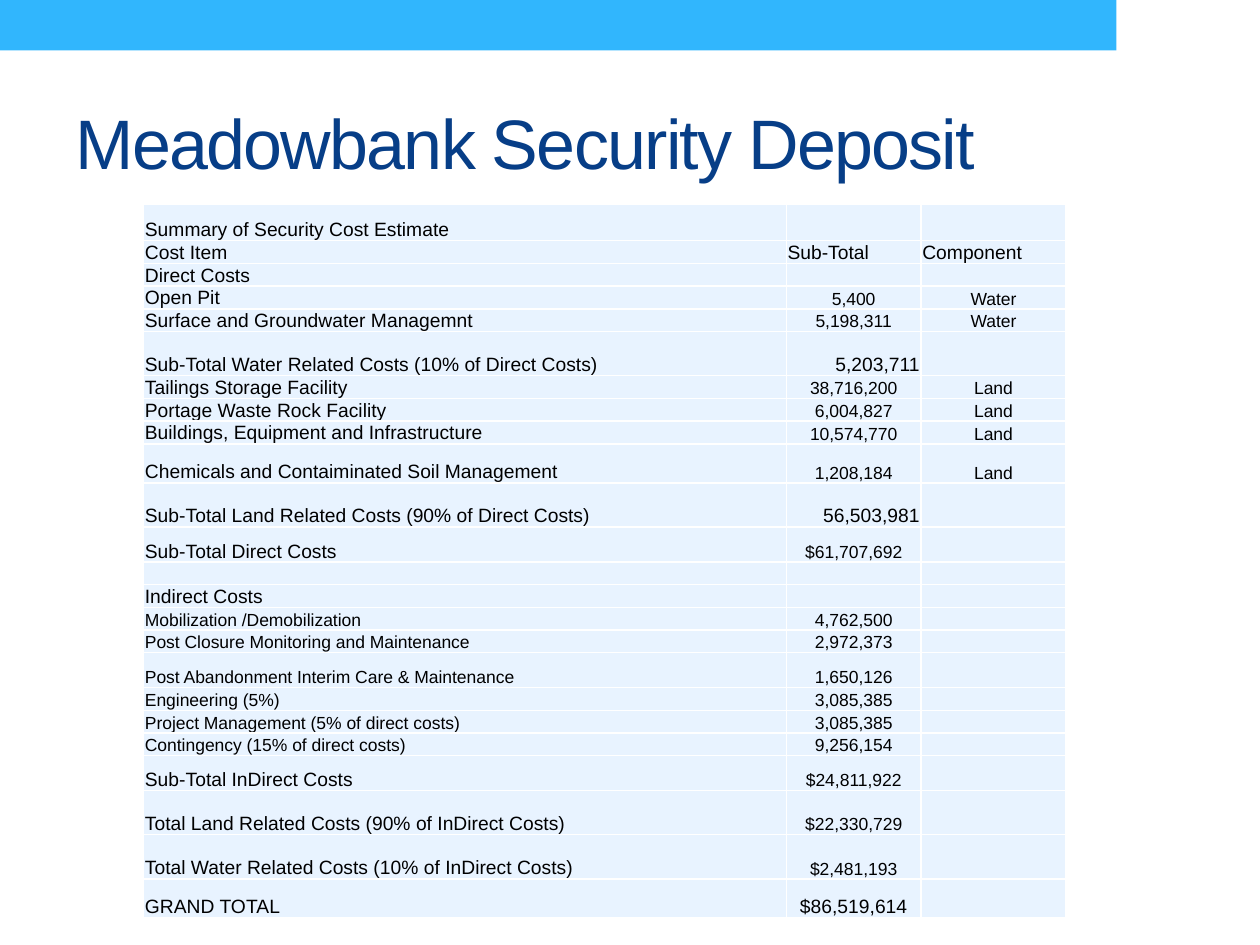
from dataclasses import dataclass
from typing import Any

from lxml.etree import SubElement
from pptx import Presentation
from pptx.dml.color import RGBColor
from pptx.enum.shapes import MSO_SHAPE
from pptx.enum.text import MSO_ANCHOR, MSO_AUTO_SIZE, PP_ALIGN
from pptx.oxml.ns import qn
from pptx.util import Inches, Pt


@dataclass(frozen=True)
class Theme:
    """Colours, font and type sizes of the slide."""
    font: str = "Arial"
    band: str = "31B6FD"
    white: str = "FFFFFF"
    title: str = "073E87"
    ink: str = "000000"
    cell: str = "E8F3FF"
    head: int = 40
    large: int = 11
    small: int = 10


LOOK = Theme()
LEFT, RIGHT = PP_ALIGN.LEFT, PP_ALIGN.RIGHT
BIG, SMALL = LOOK.large, LOOK.small


@dataclass(frozen=True)
class Bar:
    """A plain bar at the top of the slide."""
    left: float
    width: float
    height: float
    fill: str


@dataclass(frozen=True)
class Cost:
    """One row of the cost table."""
    height: float
    item: str = ""
    amount: str = ""
    group: str = ""
    size: int = BIG
    cash: int = SMALL
    align: Any = PP_ALIGN.CENTER


BARS = [Bar(0, 10, 0.4, LOOK.band), Bar(8.86, 1.14, 0.76, LOOK.white)]
WIDTHS = [5.1, 1.07, 1.15]
COSTS = [
    Cost(0.29, "Summary of Security Cost Estimate"),
    Cost(0.18, "Cost Item", "Sub-Total", "Component", cash=BIG, align=LEFT),
    Cost(0.18, "Direct Costs"),
    Cost(0.18, "Open Pit", "5,400", "Water"),
    Cost(0.18, "Surface and Groundwater Managemnt", "5,198,311", "Water"),
    Cost(0.35, "Sub-Total Water Related Costs (10% of Direct Costs)", "5,203,711",
         cash=BIG, align=RIGHT),
    Cost(0.18, "Tailings Storage Facility", "38,716,200", "Land"),
    Cost(0.18, "Portage Waste Rock Facility", "6,004,827", "Land"),
    Cost(0.18, "Buildings, Equipment and Infrastructure", "10,574,770", "Land"),
    Cost(0.31, "Chemicals and Contaiminated Soil Management", "1,208,184", "Land"),
    Cost(0.35, "Sub-Total Land Related Costs (90% of Direct Costs)", "56,503,981",
         cash=BIG, align=RIGHT),
    Cost(0.28, "Sub-Total Direct Costs", "$61,707,692"),
    Cost(0.17),
    Cost(0.18, "Indirect Costs"),
    Cost(0.17, "Mobilization /Demobilization", "4,762,500", size=SMALL),
    Cost(0.17, "Post Closure Monitoring and Maintenance", "2,972,373", size=SMALL),
    Cost(0.28, "Post Abandonment Interim Care & Maintenance", "1,650,126", size=SMALL),
    Cost(0.17, "Engineering (5%)", "3,085,385", size=SMALL),
    Cost(0.17, "Project Management (5% of direct costs)", "3,085,385", size=SMALL),
    Cost(0.17, "Contingency (15% of direct costs)", "9,256,154", size=SMALL),
    Cost(0.28, "Sub-Total InDirect Costs", "$24,811,922"),
    Cost(0.35, "Total Land Related Costs (90% of InDirect Costs)", "$22,330,729"),
    Cost(0.35, "Total Water Related Costs (10% of InDirect Costs)", "$2,481,193"),
    Cost(0.31, "GRAND TOTAL", "$86,519,614", cash=BIG),
]


def style(font: Any, size: int, tint: str) -> None:
    """Set the face, size and colour of a font."""
    font.name, font.size = LOOK.font, Pt(size)
    font.color.rgb = RGBColor.from_string(tint)


def draw_bar(slide: Any, bar: Bar) -> None:
    """Draw a bar along the top edge."""
    shape = slide.shapes.add_shape(MSO_SHAPE.RECTANGLE, Inches(bar.left), 0,
                                   Inches(bar.width), Inches(bar.height))
    shape.shadow.inherit = False
    shape.fill.solid()
    shape.fill.fore_color.rgb = RGBColor.from_string(bar.fill)
    shape.line.fill.background()


def draw_title(slide: Any, text: str) -> None:
    """Fill and place the title."""
    title = slide.shapes.title
    title.left, title.top = Inches(0.5), Inches(0.58)
    title.width, title.height = Inches(9), Inches(1.08)
    frame = title.text_frame
    frame.text = text
    frame.auto_size = MSO_AUTO_SIZE.NONE
    frame.vertical_anchor = MSO_ANCHOR.MIDDLE
    para = frame.paragraphs[0]
    para.alignment = LEFT
    style(para.font, LOOK.head, LOOK.title)
    para.runs[0]._r.get_or_add_rPr().set("spc", "-100")


def draw_cell(cell: Any, text: str, size: int, align: Any) -> None:
    """Fill one cell with its text, borders and colour."""
    cell.margin_left = cell.margin_top = cell.margin_right = Inches(0.01)
    cell.margin_bottom = 0
    cell.vertical_anchor = MSO_ANCHOR.BOTTOM
    props = cell._tc.get_or_add_tcPr()
    for side in ("a:lnL", "a:lnR", "a:lnT", "a:lnB"):
        line = SubElement(props, qn(side), w=str(Pt(1)))
        fill = SubElement(line, qn("a:solidFill"))
        SubElement(fill, qn("a:srgbClr"), val=LOOK.white)
    cell.fill.solid()
    cell.fill.fore_color.rgb = RGBColor.from_string(LOOK.cell)
    para = cell.text_frame.paragraphs[0]
    if text:
        para.text = text
        para.alignment = align
        style(para.font, size, LOOK.ink)
    else:
        SubElement(para._p, qn("a:endParaRPr"), sz=str(LOOK.small * 100))


def draw_table(slide: Any, costs: list[Cost]) -> None:
    """Draw the cost table."""
    high = sum(cost.height for cost in costs)
    frame = slide.shapes.add_table(len(costs), len(WIDTHS), Inches(1.14), Inches(1.62),
                                   Inches(sum(WIDTHS)), Inches(high))
    table = frame.table
    table.first_row = table.horz_banding = False
    for column, width in zip(table.columns, WIDTHS):
        column.width = Inches(width)
    for row, cost in zip(table.rows, costs):
        row.height = Inches(cost.height)
        item, amount, group = row.cells
        draw_cell(item, cost.item, cost.size, LEFT)
        draw_cell(amount, cost.amount, cost.cash, cost.align)
        draw_cell(group, cost.group, cost.cash, cost.align)


def main() -> None:
    """Build and save the slide."""
    deck = Presentation()
    deck.slide_width, deck.slide_height = Inches(10), Inches(7.5)
    slide = deck.slides.add_slide(deck.slide_layouts[5])
    for bar in BARS:
        draw_bar(slide, bar)
    draw_title(slide, "Meadowbank Security Deposit")
    draw_table(slide, COSTS)
    deck.save("out.pptx")


if __name__ == "__main__":
    main()
